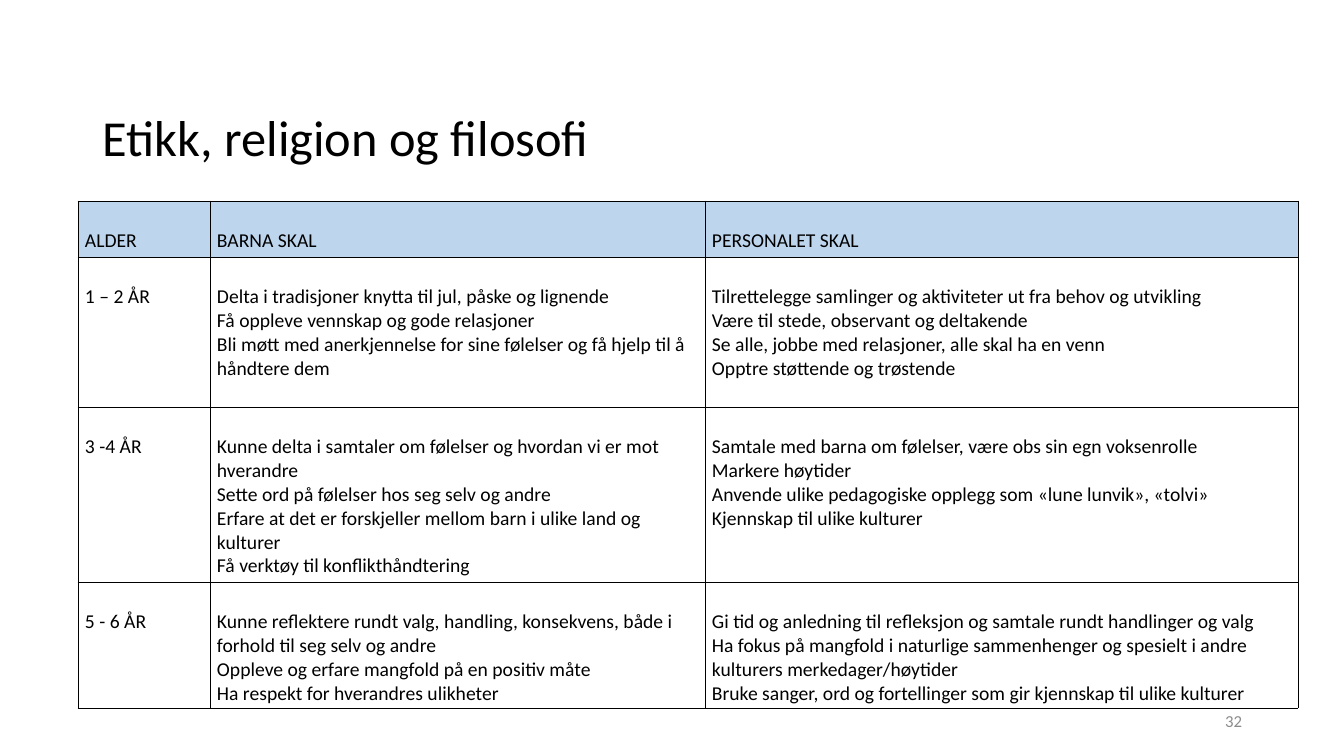
from lxml.etree import SubElement
from pptx import Presentation
from pptx.dml.color import RGBColor
from pptx.enum.text import MSO_ANCHOR, PP_ALIGN
from pptx.oxml.ns import qn
from pptx.util import Emu, Pt

# Content
TITLE = "Etikk, religion og filosofi"
PAGE_NUMBER = "32"
HEADER = (["ALDER"], ["BARNA SKAL"], ["PERSONALET SKAL"])
AGE_GROUPS = [
    (
        ["1 – 2 ÅR"],
        [
            "Delta i tradisjoner knytta til jul, påske og lignende",
            "Få oppleve vennskap og gode relasjoner",
            "Bli møtt med anerkjennelse for sine følelser og få hjelp til å håndtere dem",
        ],
        [
            "Tilrettelegge samlinger og aktiviteter ut fra behov og utvikling",
            "Være til stede, observant og deltakende",
            "Se alle, jobbe med relasjoner, alle skal ha en venn",
            "Opptre støttende og trøstende",
        ],
    ),
    (
        ["3 -4 ÅR"],
        [
            "Kunne delta i samtaler om følelser og hvordan vi er mot hverandre",
            "Sette ord på følelser hos seg selv og andre",
            "Erfare at det er forskjeller mellom barn i ulike land og kulturer",
            "Få verktøy til konflikthåndtering",
        ],
        [
            "Samtale med barna om følelser, være obs sin egn voksenrolle",
            "Markere høytider",
            "Anvende ulike pedagogiske opplegg som «lune lunvik», «tolvi»",
            "Kjennskap til ulike kulturer",
        ],
    ),
    (
        ["5 - 6 ÅR"],
        [
            "Kunne reflektere rundt valg, handling, konsekvens, både i forhold til seg selv og andre",
            "Oppleve og erfare mangfold på en positiv måte",
            "Ha respekt for hverandres ulikheter",
        ],
        [
            "Gi tid og anledning til refleksjon og samtale rundt handlinger og valg",
            "Ha fokus på mangfold i naturlige sammenhenger og spesielt i andre kulturers merkedager/høytider",
            "Bruke sanger, ord og fortellinger som gir kjennskap til ulike kulturer",
        ],
    ),
]

THEME = {
    "font": "Calibri",
    "text": "000000",
    "muted": "8C8C8C",
    "header_fill": "BDD6EE",
    "border": "000000",
    "title_size": 36,
    "table_size": 14,
    "number_size": 12,
    "border_width": 0.5,
}

# Layout in px
PAGE_SIZE = (1344, 756)
TITLE_BOX = (93, 40, 1159, 146)
TITLE_TOP_INSET = 60
NUMBER_BOX = (950, 701, 302, 40)
TABLE_ORIGIN = (78, 201)
COLUMN_WIDTHS = (132, 495, 593)
ROW_HEIGHTS = (56, 150, 175, 126)
CELL_INSETS = {"left": 7, "top": 28, "right": 7, "bottom": 4}


def px(length):
    return Emu(round(length * 914400 / 100.8))


def format_text(frame, size, color, align=PP_ALIGN.LEFT):
    for para in frame.paragraphs:
        para.alignment = align
        for span in para.runs:
            span.font.name = THEME["font"]
            span.font.size = Pt(size)
            span.font.color.rgb = RGBColor.from_string(color)


def add_text(page, bounds, text, size, color, align=PP_ALIGN.LEFT):
    box = page.shapes.add_textbox(*map(px, bounds))
    frame = box.text_frame
    frame.word_wrap = True
    frame.vertical_anchor = MSO_ANCHOR.MIDDLE
    frame.text = text
    format_text(frame, size, color, align)
    return frame


def add_borders(cell):
    properties = cell._tc.get_or_add_tcPr()
    for side in ("a:lnL", "a:lnR", "a:lnT", "a:lnB"):
        line = SubElement(properties, qn(side), w=str(Pt(THEME["border_width"])))
        fill = SubElement(line, qn("a:solidFill"))
        SubElement(fill, qn("a:srgbClr"), val=THEME["border"])


def fill_cell(cell, lines, is_header):
    for side, inset in CELL_INSETS.items():
        setattr(cell, f"margin_{side}", px(inset))
    cell.vertical_anchor = MSO_ANCHOR.TOP
    cell.text_frame.text = "\n".join(lines)
    format_text(cell.text_frame, THEME["table_size"], THEME["text"])
    add_borders(cell)
    if is_header:
        cell.fill.solid()
        cell.fill.fore_color.rgb = RGBColor.from_string(THEME["header_fill"])
    else:
        cell.fill.background()


def add_age_table(page):
    rows = [HEADER, *AGE_GROUPS]
    size = (sum(COLUMN_WIDTHS), sum(ROW_HEIGHTS))
    table = page.shapes.add_table(
        len(rows), len(HEADER), *map(px, TABLE_ORIGIN + size)
    ).table
    table.first_row = False
    table.horz_banding = False
    for column, width in zip(table.columns, COLUMN_WIDTHS):
        column.width = px(width)
    for row, height in zip(table.rows, ROW_HEIGHTS):
        row.height = px(height)
    for row_index, row in enumerate(rows):
        for column_index, lines in enumerate(row):
            fill_cell(table.cell(row_index, column_index), lines, row_index == 0)


def main():
    deck = Presentation()
    deck.slide_width, deck.slide_height = map(px, PAGE_SIZE)
    page = deck.slides.add_slide(deck.slide_layouts[6])

    # Title, set low in its box
    title = add_text(page, TITLE_BOX, TITLE, THEME["title_size"], THEME["text"])
    title.margin_top = px(TITLE_TOP_INSET)
    title.paragraphs[0].line_spacing = 0.9

    # Table and page number
    add_age_table(page)
    add_text(page, NUMBER_BOX, PAGE_NUMBER, THEME["number_size"],
             THEME["muted"], PP_ALIGN.RIGHT)

    deck.save("out.pptx")


if __name__ == "__main__":
    main()
